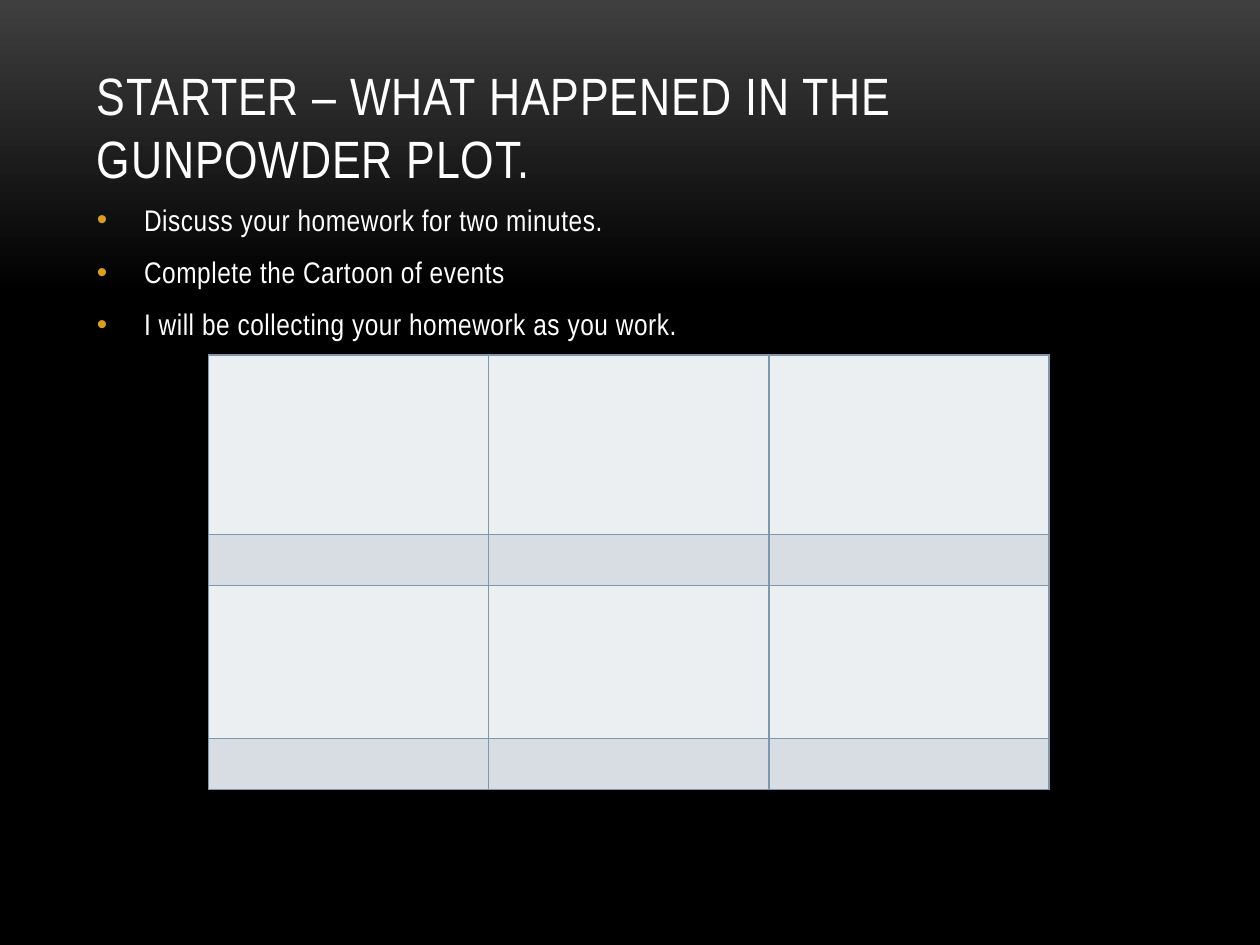
import pptx
import pptx.dml.color
import pptx.enum.text
import pptx.oxml
import pptx.oxml.ns
import pptx.util
from pptx.util import Cm

RGBColor = pptx.dml.color.RGBColor
WHITE = RGBColor(0xFF, 0xFF, 0xFF)
BLACK = RGBColor(0x00, 0x00, 0x00)
GREY = RGBColor(0x3F, 0x3F, 0x3F)
GOLD = RGBColor(0xDC, 0x9E, 0x1F)
STEEL = RGBColor(0x7E, 0x97, 0xAD)
PICTURE_FILL = RGBColor(0xEC, 0xEF, 0xF1)
CAPTION_FILL = RGBColor(0xD8, 0xDD, 0xE3)
NS = pptx.oxml.ns.nsdecls("a")


def write(p, text, *, size, spacing, before=0, after=0, bullet=None):
    """Fill a paragraph; spacing is the letter spacing in points."""
    if bullet:
        pPr = p._p.get_or_add_pPr()
        pPr.set("marL", str(Cm(0.95)))
        pPr.set("indent", str(-Cm(0.95)))
        for xml in (
            f'<a:buClr {NS}><a:srgbClr val="{bullet}"/></a:buClr>',
            f'<a:buFont {NS} typeface="Arial"/>',
            f'<a:buChar {NS} char="•"/>',
        ):
            pPr.append(pptx.oxml.parse_xml(xml))
    p.alignment = pptx.enum.text.PP_ALIGN.LEFT
    p.space_before = pptx.util.Pt(before)
    p.space_after = pptx.util.Pt(after)
    r = p.add_run()
    r.text = text
    r.font.name = "Arial Narrow"
    r.font.size = pptx.util.Pt(size)
    r.font.color.rgb = WHITE
    r._r.get_or_add_rPr().set("spc", str(round(spacing * 100)))


def add_borders(cell, color):
    tcPr = cell._tc.get_or_add_tcPr()
    for i, side in enumerate(("lnL", "lnR", "lnT", "lnB")):
        tcPr.insert(i, pptx.oxml.parse_xml(
            f'<a:{side} {NS} w="12700"><a:solidFill><a:srgbClr val="{color}"/>'
            f"</a:solidFill></a:{side}>"))


prs = pptx.Presentation()
prs.slide_width, prs.slide_height = Cm(25.4), Cm(19.05)
s = prs.slides.add_slide(prs.slide_layouts[1])

# Background, fading downwards to black
fill = s.background.fill
fill.gradient()
fill.gradient_angle = 270
for stop, color, position in zip(fill.gradient_stops, (GREY, BLACK), (0, 0.31)):
    stop.color.rgb = color
    stop.position = position

# Title
sp = s.shapes.title
sp.left, sp.top, sp.width, sp.height = Cm(1.7), Cm(0.76), Cm(22), Cm(3.18)
tf = sp.text_frame
tf.auto_size = pptx.enum.text.MSO_AUTO_SIZE.NONE
tf.vertical_anchor = pptx.enum.text.MSO_ANCHOR.BOTTOM
write(tf.paragraphs[0], "STARTER – WHAT HAPPENED IN THE GUNPOWDER PLOT.",
      size=30, spacing=0.5)

# Instructions
sp = s.placeholders[1]
sp.left, sp.top, sp.width, sp.height = Cm(1.7), Cm(3.94), Cm(22), Cm(11.43)
tf = sp.text_frame
tf.auto_size = pptx.enum.text.MSO_AUTO_SIZE.NONE
instructions = (
    "Discuss your homework for two minutes.",
    "Complete the Cartoon of events",
    "I will be collecting your homework as you work.",
)
for i, text in enumerate(instructions):
    p = tf.add_paragraph() if i else tf.paragraphs[0]
    write(p, text, size=17, spacing=0.3, before=3.4 if i else 0, after=6,
          bullet=GOLD)

# Cartoon grid: picture rows alternate with caption rows
rows = ((3.61, PICTURE_FILL), (1.03, CAPTION_FILL),
        (3.09, PICTURE_FILL), (1.03, CAPTION_FILL))
table = s.shapes.add_table(len(rows), 3, Cm(4.2), Cm(7.16), Cm(16.95),
                           Cm(sum(height for height, _ in rows))).table
table.first_row = table.horz_banding = False
for column in table.columns:
    column.width = Cm(5.65)
for row, (height, color) in zip(table.rows, rows):
    row.height = Cm(height)
    for cell in row.cells:
        cell.fill.solid()
        cell.fill.fore_color.rgb = color
        add_borders(cell, STEEL)

prs.save("out.pptx")
